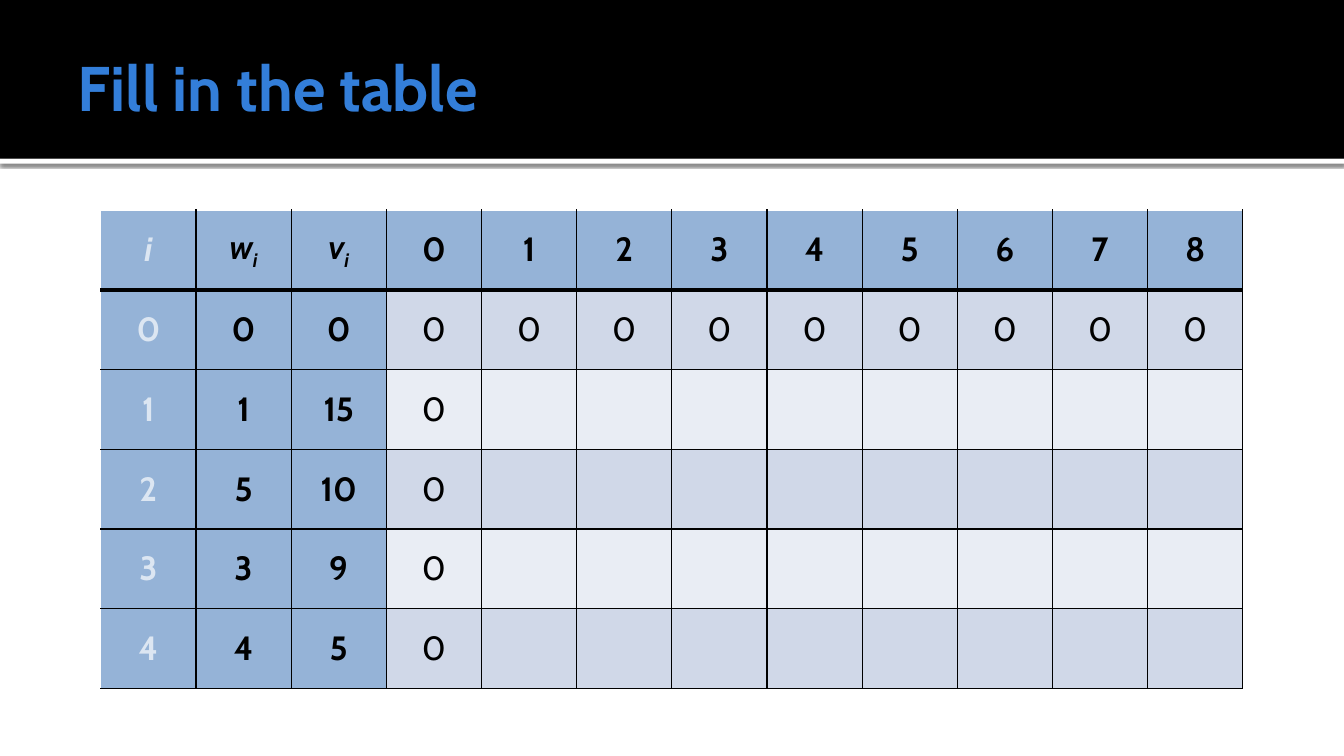
from lxml.etree import SubElement
from pptx import Presentation
from pptx.dml.color import RGBColor
from pptx.enum.shapes import MSO_SHAPE as Shape
from pptx.enum.text import MSO_ANCHOR as Anchor, PP_ALIGN as Align
from pptx.oxml.ns import qn
from pptx.util import Emu, Pt

PX = 9525
BLACK, WHITE = "000000", "FFFFFF"
TITLE_BLUE, HEADER_BLUE, PALE_BLUE = "337ED9", "95B3D7", "DCE6F2"
BANDS = ("D0D8E8", "E9EDF4")
LABEL_COLUMNS = 3
CAPACITIES = range(9)
ITEMS = [(0, 0), (1, 15), (5, 10), (3, 9), (4, 5)]


def px(length):
    return Emu(length * PX)


def color(hex_code):
    return RGBColor.from_string(hex_code)


class KnapsackSlide:
    """Holds the deck's style and slide, and draws each kind of element."""

    font_name = "Cabin"

    def __init__(self, width, height):
        self.deck = Presentation()
        self.deck.slide_width, self.deck.slide_height = px(width), px(height)
        self.slide = self.deck.slides.add_slide(self.deck.slide_layouts[6])

    def style(self, paragraph, size, fill, bold, italic=False):
        font = paragraph.font
        font.name, font.size = self.font_name, Pt(size)
        font.bold, font.italic = bold, italic
        font.color.rgb = color(fill)

    def band(self, left, top, width, height, fill):
        band = self.slide.shapes.add_shape(
            Shape.RECTANGLE, px(left), px(top), px(width), px(height))
        band.shadow.inherit = False
        band.fill.solid()
        band.fill.fore_color.rgb = color(fill)
        band.line.fill.background()
        return band

    def shadow(self, band, fill, opacity, blur, distance, angle):
        effects = band._element.spPr.find(qn("a:effectLst"))
        outer = SubElement(effects, qn("a:outerShdw"), blurRad=str(Pt(blur)),
                           dist=str(Pt(distance)), dir=str(angle * 60000),
                           algn="t", rotWithShape="0")
        tone = SubElement(outer, qn("a:srgbClr"), val=fill)
        SubElement(tone, qn("a:alpha"), val=str(opacity * 1000))

    def title(self, left, top, width, height, text):
        frame = self.slide.shapes.add_textbox(
            px(left), px(top), px(width), px(height)).text_frame
        frame.word_wrap = True
        frame.vertical_anchor = Anchor.MIDDLE
        frame.margin_left = px(10)
        frame.margin_right = frame.margin_top = frame.margin_bottom = px(5)
        heading = frame.paragraphs[0]
        heading.text = text
        self.style(heading, 45, TITLE_BLUE, bold=True)

    def borders(self, cell, sides):
        properties = cell._tc.get_or_add_tcPr()
        for side, (fill, width) in sides.items():
            line = SubElement(properties, qn(f"a:ln{side}"), w=str(Pt(width)))
            paint = SubElement(line, qn("a:solidFill"))
            SubElement(paint, qn("a:srgbClr"), val=fill)

    def cell(self, cell, row, column, text):
        is_label = row == 0 or column < LABEL_COLUMNS
        self.borders(cell, {
            "L": (BLACK if column else WHITE, 1),
            "R": (BLACK, 1),
            "T": (BLACK if row else WHITE, 3 if row == 1 else 1),
            "B": (BLACK, 1 if row else 3),
        })
        cell.fill.solid()
        cell.fill.fore_color.rgb = color(
            HEADER_BLUE if is_label else BANDS[(row - 1) % 2])
        cell.vertical_anchor = Anchor.MIDDLE
        cell.margin_left = cell.margin_right = px(12)
        cell.margin_top = cell.margin_bottom = px(6)
        entry = cell.text_frame.paragraphs[0]
        entry.alignment = Align.CENTER
        symbol, _, subscript = text.partition("_")
        if symbol:
            entry.add_run().text = symbol
        if subscript:
            index = entry.add_run()
            index.text = subscript
            index._r.get_or_add_rPr().set("baseline", "-25000")
        self.style(entry, 24, BLACK if column else PALE_BLUE, bold=is_label,
                   italic=row == 0 and column < LABEL_COLUMNS)

    def table(self, left, top, width, height, rows):
        table = self.slide.shapes.add_table(
            len(rows), len(rows[0]), px(left), px(top), px(width), px(height)).table
        table.first_row = table.horz_banding = False
        for row, texts in enumerate(rows):
            for column, text in enumerate(texts):
                self.cell(table.cell(row, column), row, column, text)


def main():
    page = KnapsackSlide(1280, 720)
    rule = page.band(0, 151, 1280, 5, WHITE)
    page.shadow(rule, BLACK, opacity=60, blur=2.5, distance=0.8, angle=90)
    page.band(0, 0, 1280, 151, BLACK)
    page.title(64, 16, 1152, 132, "Fill in the table")

    rows = [["i", "w_i", "v_i", *map(str, CAPACITIES)]]
    for item, (weight, value) in enumerate(ITEMS):
        best = ["0" if item == 0 or capacity == 0 else "" for capacity in CAPACITIES]
        rows.append([str(item), str(weight), str(value), *best])
    page.table(96, 200, 1088, 456, rows)
    page.deck.save("out.pptx")


if __name__ == "__main__":
    main()
